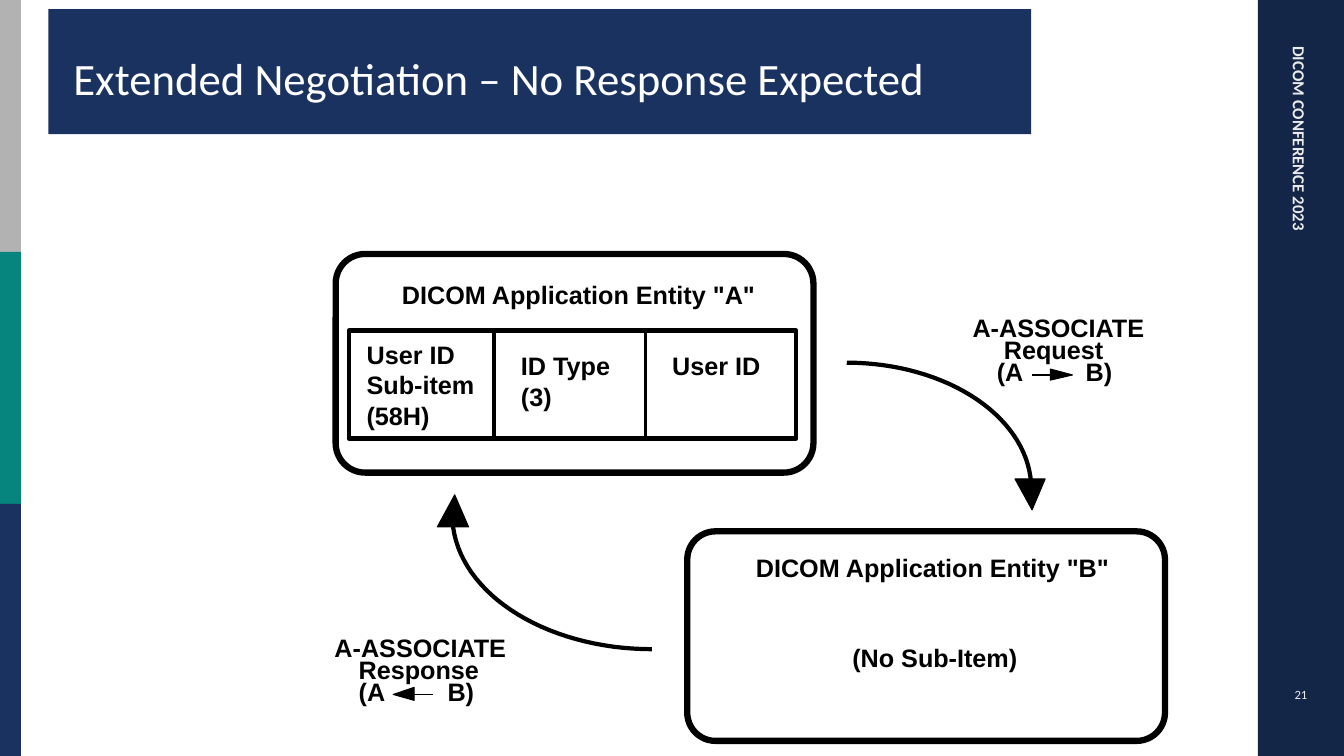
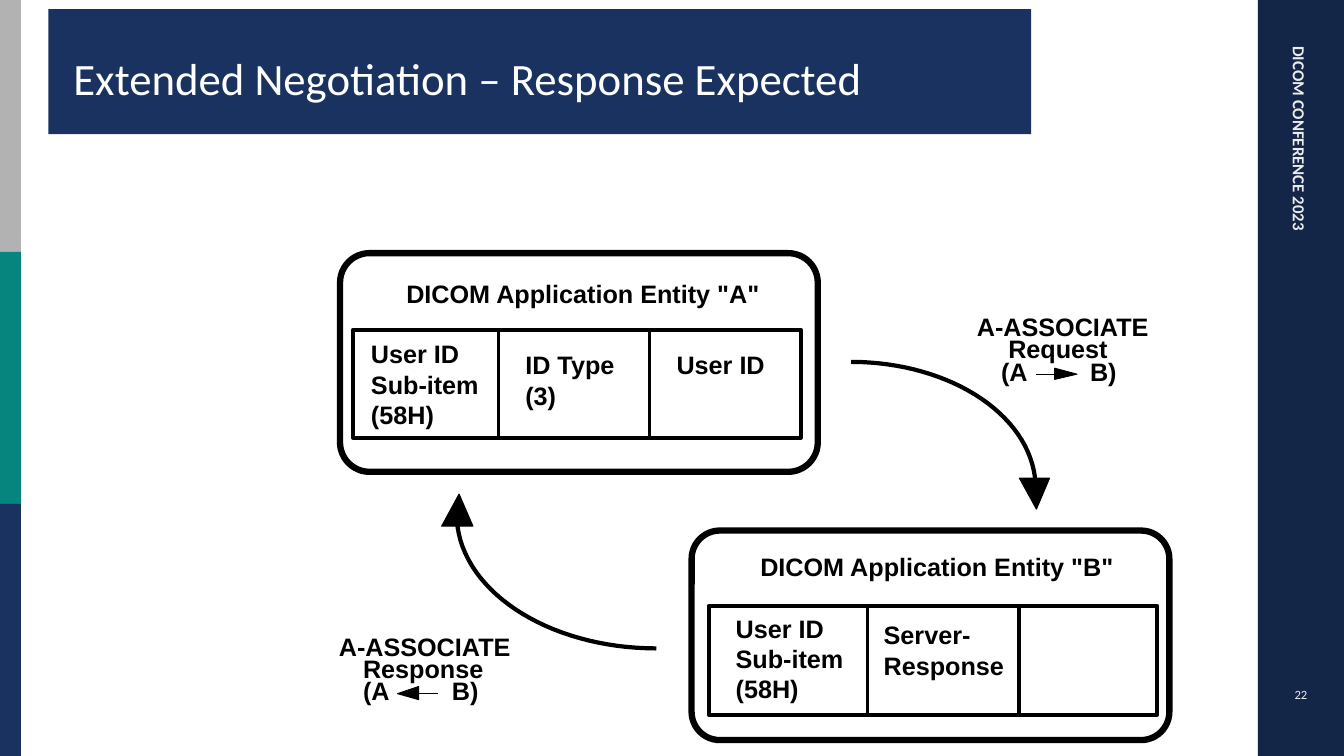
import math

import pptx
import pptx.dml.color
import pptx.enum.shapes
import pptx.enum.text
import pptx.oxml
import pptx.oxml.ns
import pptx.util

Cm = pptx.util.Cm
Pt = pptx.util.Pt
SHAPE = pptx.enum.shapes.MSO_SHAPE
ANCHOR = pptx.enum.text.MSO_ANCHOR
ALIGN = pptx.enum.text.PP_ALIGN

# Theme: colours, type styles and line widths
THEME = {
    "colours": {"navy": "1A3260", "dark": "142648", "teal": "06847E", "grey": "B2B2B2",
                "pale": "EBEBEB", "white": "FFFFFF", "black": "000000"},
    "styles": {
        "title": ("white", {"name": "Calibri", "size": Pt(32), "bold": False}),
        "event": ("pale", {"name": "Calibri", "size": Pt(12), "bold": True}),
        "number": ("pale", {"name": "Calibri", "size": Pt(9), "bold": False}),
        "diagram": ("black", {"name": "Arial", "size": Pt(18), "bold": True}),
    },
    "lines": {"entity": 4.5, "bold": 3, "divider": 2.25, "thin": 0.75},
}
NO_MARGINS = {f"margin_{side}": 0 for side in ("left", "top", "right", "bottom")}


def paint(shape, fill=None, line=None):
    """Set the fill colour and the black outline, or remove them."""
    colours = THEME["colours"]
    if hasattr(shape, "fill"):
        shape.shadow.inherit = False
        if fill:
            shape.fill.solid()
            shape.fill.fore_color.rgb = pptx.dml.color.RGBColor.from_string(colours[fill])
        else:
            shape.fill.background()
    else:
        shape._element.spPr.append(pptx.oxml.parse_xml(
            f'<a:effectLst {pptx.oxml.ns.nsdecls("a")}/>'))
    if line:
        shape.line.fill.solid()
        shape.line.color.rgb = pptx.dml.color.RGBColor.from_string(colours["black"])
        shape.line.width = Pt(THEME["lines"][line])
    else:
        shape.line.fill.background()
    return shape


def write(shapes, text, box, style, frame_format=None, align=ALIGN.LEFT, tab=None):
    """Add a wrapped text box in one of the theme's styles."""
    textbox = shapes.add_textbox(*map(Cm, box))
    frame = textbox.text_frame
    for name, value in {"word_wrap": True, **(frame_format or {})}.items():
        setattr(frame, name, value)
    paragraph = frame.paragraphs[0]
    paragraph.alignment = align
    if tab:
        paragraph._p.get_or_add_pPr().append(pptx.oxml.parse_xml(
            f'<a:tabLst {pptx.oxml.ns.nsdecls("a")}><a:tab pos="{Cm(tab)}" algn="l"/></a:tabLst>'))
    run = paragraph.add_run()
    run.text = text
    colour, font_format = THEME["styles"][style]
    for name, value in font_format.items():
        setattr(run.font, name, value)
    run.font.color.rgb = pptx.dml.color.RGBColor.from_string(THEME["colours"][colour])
    return textbox


# Shared frame, in centimetres: left, top, width, height
BANDS = [("dark", (31.7, 0, 2.17, 19.05)), ("navy", (1.22, 0.23, 24.77, 3.15))]
BANDS += [(colour, (0, 6.35 * row, 0.53, 6.35))
          for row, colour in enumerate(("grey", "teal", "navy"))]

# Entities: name, box, heading place, cell grid, dividers, texts
USER_ID_ITEM = "User ID Sub-item (58H)"
ENTITY_A = {
    "heading": ('DICOM Application Entity "A"', 10.13, 7.04),
    "box": (8.46, 6.4, 12.04, 5.51),
    "grid": (8.79, 8.33, 11.28, 2.72),
    "dividers": (12.45, 16.26),
    "texts": [(USER_ID_ITEM, (8.99, 8.43, 3.23, 2.31)),
              ("ID Type (3)", (12.88, 8.71, 3.23, 1.7)),
              ("User ID", (16.69, 8.71, 3.81, 1.7))],
}
ENTITY_B = {
    "heading": ('DICOM Application Entity "B"', 19.05, 13.92),
    "box": (17.32, 13.39, 12.04, 5.28),
    "texts": [("(No Sub-Item)", (21.23, 16.05, 4.83, 2.13))],
}
ENTITY_B_ANSWERING = {
    **ENTITY_B,
    "grid": (17.75, 15.29, 11.3, 2.74),
    "dividers": (21.76, 25.57),
    "texts": [(USER_ID_ITEM, (18.18, 15.34, 3.23, 2.31)),
              ("Server-Response", (21.91, 15.51, 3.96, 2.13))],
}

# Messages: label lines, quarter-ellipse arc, arrowheads, short arrow shaft
MESSAGES = [
    {"labels": [("A-ASSOCIATE", 24.51), ("Request", 25.3), ("(A\tB)", 25.12)], "top": 7.87,
     "centre": (21.34, 12.32), "radii": (4.65, 3.18),
     "heads": [((26.01, 12.85), (25.58, 12.07), (26.34, 12.07)),
               ((27.03, 9.45), (26.47, 9.58), (26.47, 9.3))],
     "shaft": (26.01, 9.45, 26.47, 9.45)},
    {"labels": [("A-ASSOCIATE", 8.43), ("Response", 9.04), ("(A\tB)", 9.04)], "top": 15.93,
     "centre": (16.43, 12.98), "radii": (-5.03, -3.38),
     "heads": [((11.46, 12.47), (11.81, 13.28), (11.02, 13.28)),
               ((9.91, 17.5), (10.44, 17.32), (10.44, 17.65))],
     "shaft": (10.44, 17.5, 10.92, 17.5)},
]
LABEL_STEP = 0.56
ARC_STEPS = 32

# Slides: title, number, entities, shift of the diagram
SLIDES = [
    ("Extended Negotiation – No Response Expected", "21", (ENTITY_A, ENTITY_B), (0, 0)),
    ("Extended Negotiation – Response Expected", "22", (ENTITY_A, ENTITY_B_ANSWERING),
     (0.11, -0.02)),
]

presentation = pptx.Presentation()
presentation.slide_width, presentation.slide_height = Cm(33.87), Cm(19.05)

for title, number, entities, shift in SLIDES:
    slide = presentation.slides.add_slide(presentation.slide_layouts[6])

    # Bands, title, event name and slide number
    for colour, box in BANDS:
        paint(slide.shapes.add_shape(SHAPE.RECTANGLE, *map(Cm, box)), fill=colour)
    event = write(slide.shapes, "DICOM CONFERENCE 2023", (26.97, 6.32, 11.56, 0.76), "event")
    event.rotation = 90
    write(slide.shapes, number, (31.7, 16.99, 2.17, 1.02), "number",
          {"vertical_anchor": ANCHOR.MIDDLE}, ALIGN.CENTER)
    write(slide.shapes, title, (1.6, 0.58, 24.05, 2.18), "title",
          {"vertical_anchor": ANCHOR.BOTTOM})

    diagram = slide.shapes.add_group_shape()
    shapes = diagram.shapes

    # Messages between the entities
    for message in MESSAGES:
        for row, (label, left) in enumerate(message["labels"]):
            write(shapes, label, (left, message["top"] + row * LABEL_STEP, 4.55, 0.76),
                  "diagram", NO_MARGINS, tab=2.24)
        (centre_x, centre_y), (radius_x, radius_y) = message["centre"], message["radii"]
        angles = [math.pi / 2 * step / ARC_STEPS for step in range(ARC_STEPS + 1)]
        arc = [(Cm(centre_x + radius_x * math.sin(angle)),
                Cm(centre_y - radius_y * math.cos(angle))) for angle in angles]
        builder = shapes.build_freeform(*arc[0])
        builder.add_line_segments(arc[1:], close=False)
        paint(builder.convert_to_shape(), line="bold")
        for head in message["heads"]:
            corners = [(Cm(x), Cm(y)) for x, y in head]
            builder = shapes.build_freeform(*corners[0])
            builder.add_line_segments(corners[1:], close=True)
            paint(builder.convert_to_shape(), fill="black", line="thin")
        paint(shapes.add_connector(pptx.enum.shapes.MSO_CONNECTOR.STRAIGHT,
                                   *map(Cm, message["shaft"])), line="thin")

    # Entities with their cells
    for entity in entities:
        outline = shapes.add_shape(SHAPE.ROUNDED_RECTANGLE, *map(Cm, entity["box"]))
        outline.adjustments[0] = 0.135
        paint(outline, line="entity")
        heading, left, top = entity["heading"]
        write(shapes, heading, (left, top, 9.2, 0.76), "diagram", NO_MARGINS)
        if "grid" in entity:
            grid = entity["grid"]
            paint(shapes.add_shape(SHAPE.RECTANGLE, *map(Cm, grid)), line="bold")
            for x in entity["dividers"]:
                paint(shapes.add_connector(pptx.enum.shapes.MSO_CONNECTOR.STRAIGHT,
                                           Cm(x), Cm(grid[1]), Cm(x), Cm(grid[1] + grid[3])),
                      line="divider")
        for text, box in entity["texts"]:
            write(shapes, text, box, "diagram")

    diagram.left += Cm(shift[0])
    diagram.top += Cm(shift[1])

presentation.save("out.pptx")
